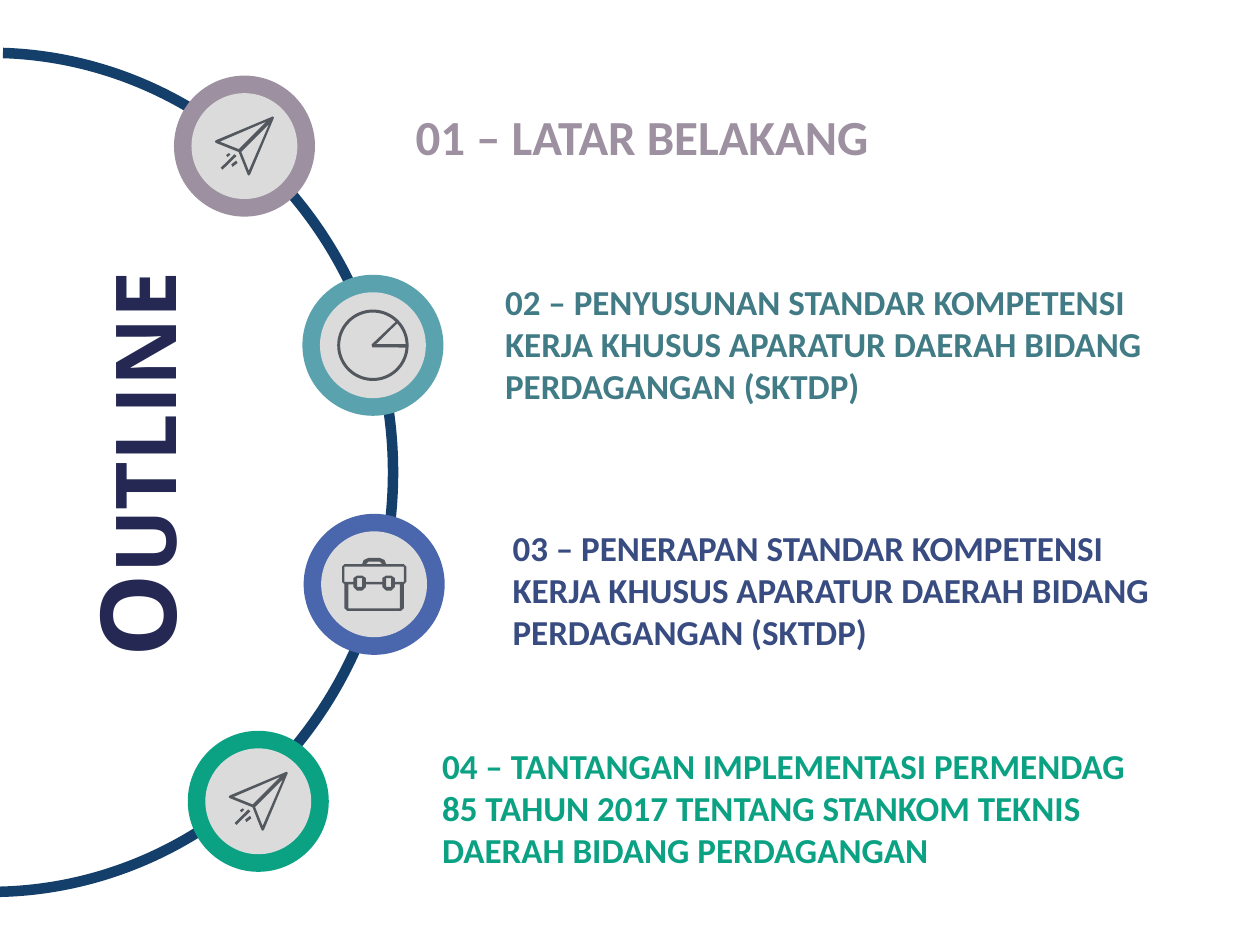
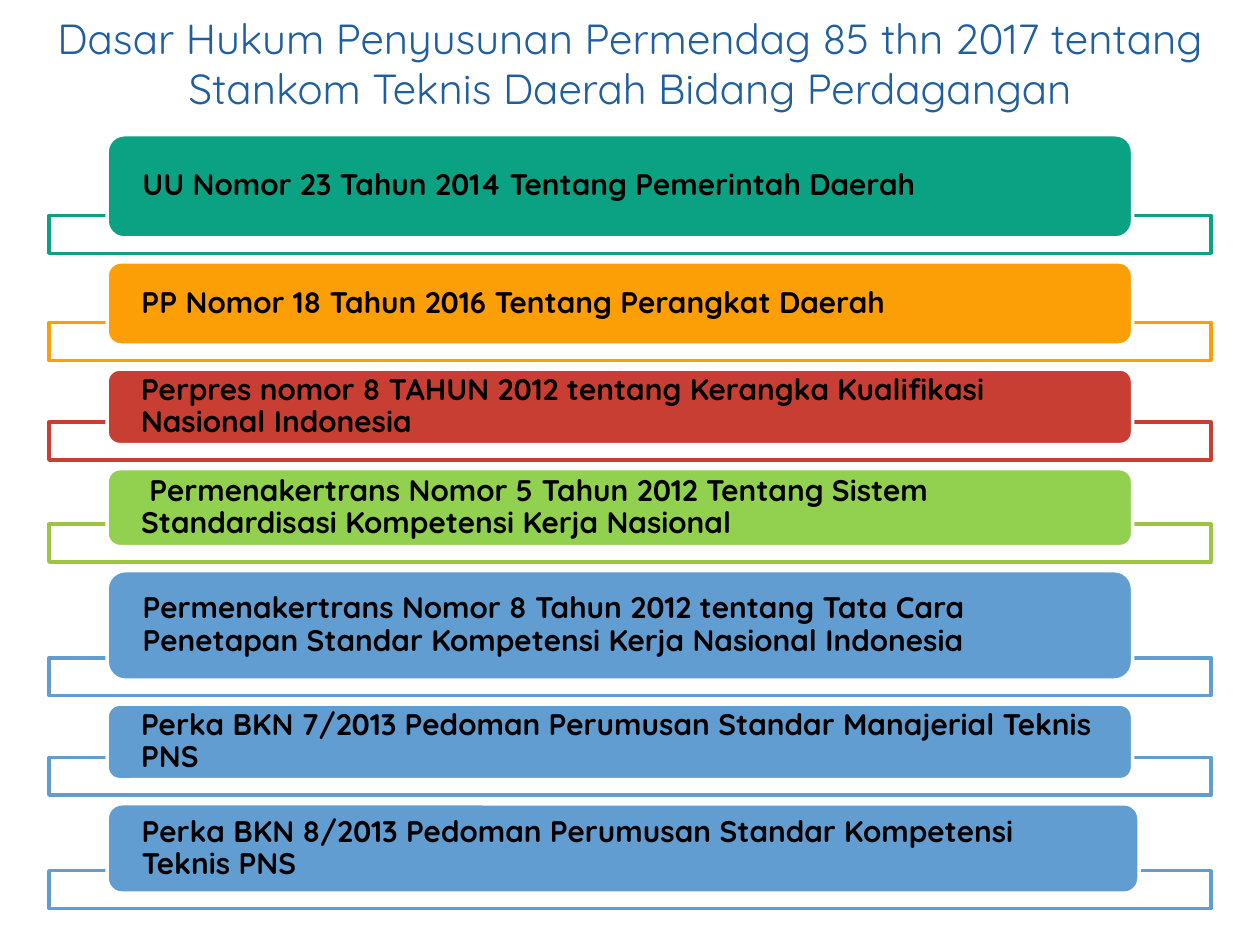
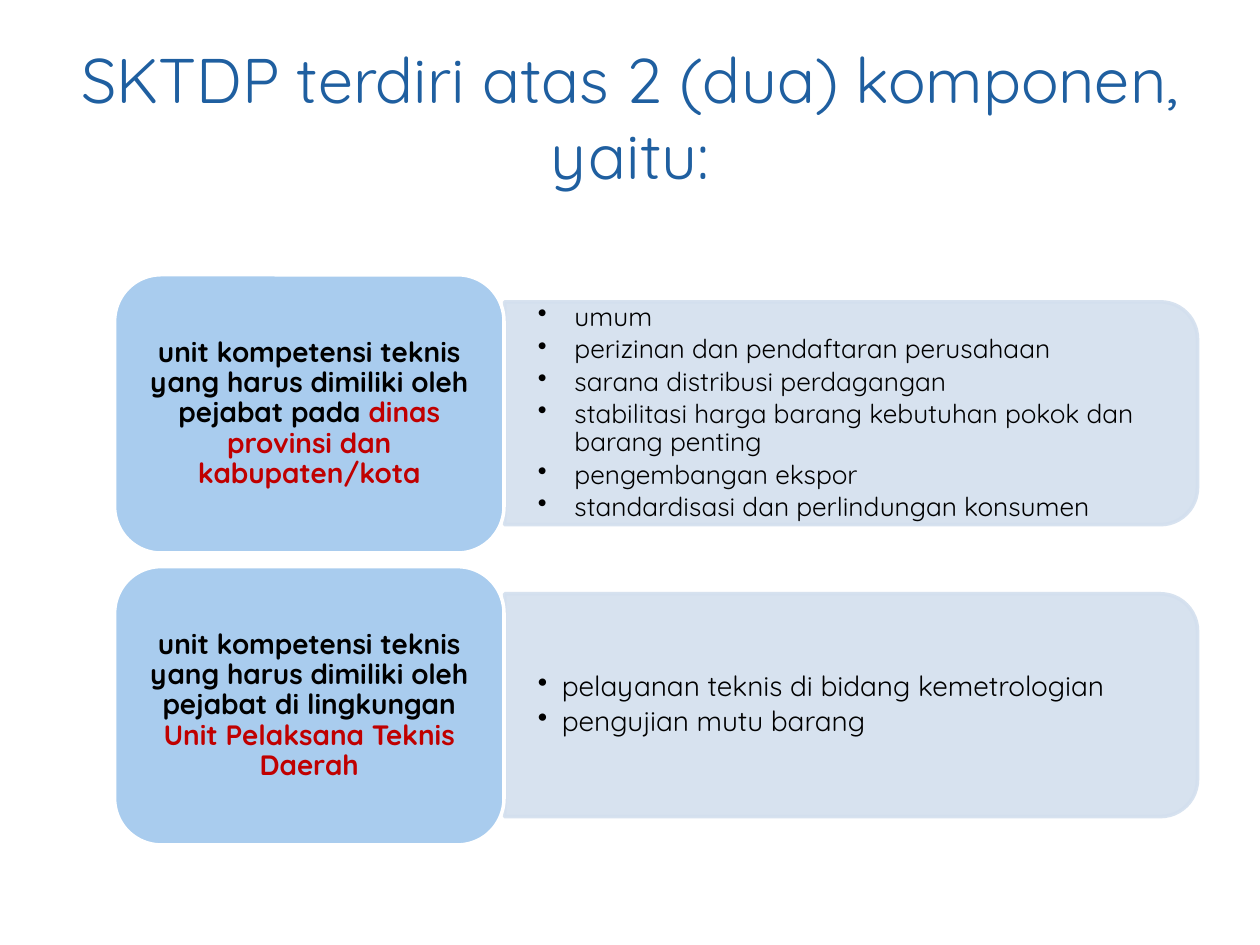
"""Build three slides on the SKTDP competence standard for regional trade offices."""

from dataclasses import dataclass
from math import cos, radians, sin

from lxml import etree
from pptx import Presentation
from pptx.dml.color import RGBColor
from pptx.enum.shapes import MSO_SHAPE
from pptx.enum.text import MSO_ANCHOR, MSO_AUTO_SIZE, PP_ALIGN
from pptx.oxml.ns import qn
from pptx.util import Pt

ARC, OVAL, RECT = MSO_SHAPE.ARC, MSO_SHAPE.OVAL, MSO_SHAPE.RECTANGLE
ROUNDED, ROUND_TOP = MSO_SHAPE.ROUNDED_RECTANGLE, MSO_SHAPE.ROUND_2_SAME_RECTANGLE
TOP, MIDDLE = MSO_ANCHOR.TOP, MSO_ANCHOR.MIDDLE
LEFT, CENTER = PP_ALIGN.LEFT, PP_ALIGN.CENTER
GROW, FIXED = MSO_AUTO_SIZE.SHAPE_TO_FIT_TEXT, MSO_AUTO_SIZE.NONE


@dataclass(frozen=True)
class Theme:
    """Colours, fonts and type sizes shared by the slides."""

    white: str = "FFFFFF"
    black: str = "000000"
    title: str = "1F5FA0"
    teal: str = "5AA2AE"
    dark_teal: str = "417B85"
    mauve: str = "9D90A0"
    indigo: str = "4A66AC"
    dark_indigo: str = "384C81"
    navy: str = "242852"
    arc: str = "143F6A"
    green: str = "0BA183"
    orange: str = "FC9E06"
    red: str = "C83E32"
    lime: str = "92D050"
    lime_frame: str = "9CC544"
    blue: str = "629DD1"
    pale_blue: str = "A9CCEE"
    panel: str = "D3DFEE"
    accent: str = "C00000"
    disc: str = "DBDBDB"
    icon: str = "53585F"
    sans: str = "Quicksand"
    label_font: str = "Calibri"
    outline_font: str = "Open Sans"
    outline_size: float = 60
    title_size: float = 36
    small_title_size: float = 24
    lead_size: float = 28
    label_size: float = 20
    card_size: float = 17
    unit_size: float = 16
    list_size: float = 15


THEME = Theme()
Point = tuple[float, float]
Contour = list[Point]


@dataclass(frozen=True)
class Place:
    """Left, top, width and height in points."""

    left: float
    top: float
    width: float
    height: float

    def lengths(self) -> list[Pt]:
        """Return the four lengths for python-pptx."""
        return [Pt(n) for n in (self.left, self.top, self.width, self.height)]


@dataclass(frozen=True)
class Icon:
    """Outline contours, with holes, within a box in points."""

    width: float
    height: float
    contours: list[Contour]


@dataclass(frozen=True)
class Chapter:
    """A ring on the arc and its label."""

    left: float
    top: float
    ring: str
    icon: Icon
    label: str
    label_place: Place
    color: str
    size: float = THEME.label_size
    wrap: bool = True


@dataclass(frozen=True)
class Law:
    """A legal basis card and the frame behind it."""

    text: str
    height: float
    fill: str
    frame: str
    width: float = 586


@dataclass(frozen=True)
class Unit:
    """A competence unit with its list of topics."""

    lead: str
    accent: str
    topics: list[str]
    size: float
    indent: float


def turn(radius: float, start: int, end: int, center: float) -> Contour:
    """Return points along a clockwise circular arc."""
    return [
        (center + radius * cos(radians(a)), center + radius * sin(radians(a)))
        for a in range(start, end + 1, 5)
    ]


def clasp(left: float) -> Contour:
    """Return the opening of one briefcase clasp."""
    return [(left, 11.5), (left + 2.9, 11.5), (left + 2.9, 16.6), (left, 16.6)]


PLANE = Icon(33.8, 33.8, [
    [(33.8, 0.7), (33.1, 0), (0.6, 13.6), (0, 14.4), (0.6, 15.1), (13.6, 20.3),
     (18.7, 33.1), (19.4, 33.8), (20.2, 33.1)],
    [(19.4, 31), (15.1, 20.2), (31, 4.3)],
    [(2.9, 14.4), (29.5, 2.9), (13.7, 18.7)],
    [(12.2, 25.2), (13, 26.6), (10.1, 28.8), (9.4, 27.4)],
    [(11.2, 21.6), (12.4, 22.6), (4.4, 30.4), (3.4, 29.3)],
    [(8.1, 20.9), (8.9, 21.8), (7.3, 23.2), (6.4, 22.1)],
])
PIE = Icon(40.8, 40.8, [
    turn(20.4, 0, 355, 20.4),
    turn(18.7, 4, 314, 20.4) + [(19.6, 20), (20.1, 21.6)],
    turn(18.7, 318, 358, 20.4) + [(22.3, 19.7)],
])
BRIEFCASE = Icon(36.7, 30.2, [
    [(1.4, 3.6), (11.5, 3.6), (12.4, 1.2), (15.1, 0), (21.6, 0), (24.3, 1.2),
     (25.2, 3.6), (35.3, 3.6), (36.7, 5), (36.7, 13.7), (35.3, 15.1), (35.3, 28.8),
     (33.8, 30.2), (2.9, 30.2), (1.4, 28.8), (1.4, 15.1), (0, 13.7), (0, 5)],
    [(15.1, 2.2), (21.6, 2.2), (23, 3.6), (13.7, 3.6)],
    [(35.3, 5), (35.3, 13.7), (30.2, 13.7), (30.2, 11.5), (28.1, 10.1), (25.2, 10.1),
     (23, 11.5), (23, 13.7), (13.7, 13.7), (13.7, 11.5), (11.5, 10.1), (8.6, 10.1),
     (6.5, 11.5), (6.5, 13.7), (1.4, 13.7), (1.4, 5)],
    clasp(8.6),
    clasp(25.2),
    [(33.1, 28.8), (3.6, 28.8), (3.6, 15.1), (6.5, 15.1), (6.5, 16.6), (8.6, 18.7),
     (11.5, 18.7), (13.7, 16.6), (13.7, 15.1), (23, 15.1), (23, 16.6), (25.2, 18.7),
     (28.1, 18.7), (30.2, 16.6), (30.2, 15.1), (33.1, 15.1)],
])

CHAPTERS = [
    Chapter(99.4, 43.2, THEME.mauve, PLANE, "01 – LATAR BELAKANG",
            Place(230.4, 57.6, 276.5, 41), THEME.mauve, THEME.lead_size, False),
    Chapter(172.8, 157, THEME.teal, PIE,
            "02 – PENYUSUNAN STANDAR KOMPETENSI KERJA KHUSUS APARATUR DAERAH "
            "BIDANG PERDAGANGAN (SKTDP)",
            Place(281.5, 157, 386, 80), THEME.dark_teal),
    Chapter(173.5, 293.6, THEME.indigo, BRIEFCASE,
            "03 – PENERAPAN STANDAR KOMPETENSI KERJA KHUSUS APARATUR DAERAH "
            "BIDANG PERDAGANGAN (SKTDP)",
            Place(285.8, 297.4, 398, 80), THEME.dark_indigo),
    Chapter(107.3, 417.6, THEME.green, PLANE,
            "04 – TANTANGAN IMPLEMENTASI PERMENDAG 85 TAHUN 2017 TENTANG STANKOM "
            "TEKNIS DAERAH BIDANG PERDAGANGAN",
            Place(245.5, 422, 422, 80), THEME.green),
]

LAWS = [
    Law("UU Nomor 23 Tahun 2014 Tentang Pemerintah Daerah",
        59, THEME.green, THEME.green),
    Law("PP Nomor 18 Tahun 2016 Tentang Perangkat Daerah",
        47.5, THEME.orange, THEME.orange),
    Law("Perpres nomor 8 TAHUN 2012 tentang Kerangka Kualifikasi Nasional Indonesia",
        43.2, THEME.red, THEME.red),
    Law(" Permenakertrans Nomor 5 Tahun 2012 Tentang Sistem Standardisasi "
        "Kompetensi Kerja Nasional", 44.6, THEME.lime, THEME.lime_frame),
    Law("Permenakertrans Nomor 8 Tahun 2012 tentang Tata Cara Penetapan Standar "
        "Kompetensi Kerja Nasional Indonesia", 62.6, THEME.blue, THEME.blue),
    Law("Perka BKN 7/2013 Pedoman Perumusan Standar Manajerial Teknis PNS",
        43.2, THEME.blue, THEME.blue),
    Law("Perka BKN 8/2013 Pedoman Perumusan Standar Kompetensi Teknis PNS",
        51.1, THEME.blue, THEME.blue, 589.7),
]

UNITS = [
    Unit("unit kompetensi teknis yang harus dimiliki oleh pejabat pada ",
         "dinas provinsi dan kabupaten/kota",
         ["umum", "perizinan dan pendaftaran perusahaan",
          "sarana distribusi perdagangan",
          "stabilitasi harga barang kebutuhan pokok dan barang penting",
          "pengembangan ekspor", "standardisasi dan perlindungan konsumen"],
         THEME.list_size, 20.9),
    Unit("unit kompetensi teknis yang harus dimiliki oleh pejabat di lingkungan ",
         "Unit Pelaksana Teknis Daerah",
         ["pelayanan teknis di bidang kemetrologian", "pengujian mutu barang"],
         THEME.unit_size, 13.7),
]


def fade(fill, alpha: int) -> None:
    """Give a solid fill an opacity in percent."""
    color = fill._xPr.find(qn("a:solidFill"))[0]
    etree.SubElement(color, qn("a:alpha"), val=str(alpha * 1000))


def style(shape, fill: str | None = None, line: str | None = None,
          weight: float = 2, alpha: int = 100) -> None:
    """Set the fill, line and opacity of a shape without shadow."""
    shape.shadow.inherit = False
    if fill:
        shape.fill.solid()
        shape.fill.fore_color.rgb = RGBColor.from_string(fill)
        if alpha < 100:
            fade(shape.fill, alpha)
    else:
        shape.fill.background()
    if line:
        shape.line.color.rgb = RGBColor.from_string(line)
        shape.line.width = Pt(weight)
    else:
        shape.line.fill.background()


def add_block(page, kind, place: Place, **look):
    """Add a styled preset shape."""
    shape = page.shapes.add_shape(kind, *place.lengths())
    style(shape, **look)
    return shape


def add_bullet(para, indent: float) -> None:
    """Give a paragraph a round bullet with a hanging indent."""
    props = para._p.get_or_add_pPr()
    props.set("marL", str(Pt(indent)))
    props.set("indent", str(-Pt(indent)))
    etree.SubElement(props, qn("a:buChar"), char="•")


def add_outline(span, color: str) -> None:
    """Give a text run a thin outline."""
    line = etree.Element(qn("a:ln"), w=str(Pt(0.75)))
    fill = etree.SubElement(line, qn("a:solidFill"))
    etree.SubElement(fill, qn("a:srgbClr"), val=color)
    span.font._element.insert(0, line)


def write(box, paras: list[list[str]], *, size: float, font: str = THEME.sans,
          colors: tuple[str, ...] = (THEME.black,), bold: bool = False,
          align=LEFT, anchor=MIDDLE, inset: Point = (7.2, 3.6), spacing: float = 1,
          after: float = 0, indent: float = 0, outline: str = "",
          small_caps: bool = False, wrap: bool = True, fit=FIXED) -> None:
    """Write paragraphs of spans, one colour per span, into a shape."""
    frame = box.text_frame
    frame.word_wrap, frame.auto_size, frame.vertical_anchor = wrap, fit, anchor
    frame.margin_left = frame.margin_right = Pt(inset[0])
    frame.margin_top = frame.margin_bottom = Pt(inset[1])
    for index, spans in enumerate(paras):
        para = frame.add_paragraph() if index else frame.paragraphs[0]
        para.alignment, para.line_spacing, para.space_after = align, spacing, Pt(after)
        if indent:
            add_bullet(para, indent)
        for text, color in zip(spans, colors):
            span = para.add_run()
            span.text = text
            span.font.name, span.font.size, span.font.bold = font, Pt(size), bold
            span.font.color.rgb = RGBColor.from_string(color)
            if outline:
                add_outline(span, outline)
            if small_caps:
                span.font._element.set("cap", "small")


def add_text(page, place: Place, paras: list[list[str]], **text_format):
    """Add a text box with formatted paragraphs."""
    box = page.shapes.add_textbox(*place.lengths())
    write(box, paras, **text_format)
    return box


def add_title(page, place: Place, text: str, size: float) -> None:
    """Add the centred slide title."""
    add_text(page, place, [[text]], size=size, colors=(THEME.title,),
             align=CENTER, outline=THEME.teal)


def add_icon(page, icon: Icon, left: float, top: float) -> None:
    """Draw an icon as one filled freeform."""
    fine = [[(x * 100, y * 100) for x, y in contour] for contour in icon.contours]
    builder = page.shapes.build_freeform(*fine[0][0], scale=Pt(0.01))
    builder.add_line_segments(fine[0][1:])
    for contour in fine[1:]:
        builder.move_to(*contour[0])
        builder.add_line_segments(contour[1:])
    style(builder.convert_to_shape(Pt(left), Pt(top)), fill=THEME.icon)


def add_chapter(page, chapter: Chapter) -> None:
    """Draw a ring with its icon and label."""
    ring, disc = 80.6, 60.5
    for diameter, color in ((ring, chapter.ring), (disc, THEME.disc)):
        gap = (ring - diameter) / 2
        add_block(page, OVAL, Place(chapter.left + gap, chapter.top + gap,
                                    diameter, diameter), fill=color)
    add_icon(page, chapter.icon, chapter.left + (ring - chapter.icon.width) / 2,
             chapter.top + (ring - chapter.icon.height) / 2)
    add_text(page, chapter.label_place, [[chapter.label]], size=chapter.size,
             font=THEME.label_font, colors=(chapter.color,), bold=True,
             anchor=TOP, wrap=chapter.wrap, fit=GROW)


def build_outline(page) -> None:
    """Build the outline slide."""
    arc = add_block(page, ARC, Place(-235.4, 30.2, 460, 479.5),
                    line=THEME.arc, weight=6)
    arc.adjustments[0], arc.adjustments[1] = 163.02, 53.62
    heading = add_text(page, Place(-103.7, 226, 360.7, 78.5), [["Outline"]],
                       size=THEME.outline_size, font=THEME.outline_font,
                       colors=(THEME.navy,), bold=True, align=CENTER, small_caps=True)
    heading.rotation = 270
    for chapter in CHAPTERS:
        add_chapter(page, chapter)


def build_laws(page) -> None:
    """Build the slide of legal bases."""
    add_title(page, Place(0, 0, 720, 71.3),
              "Dasar Hukum Penyusunan Permendag 85 thn 2017 tentang Stankom Teknis "
              "Daerah Bidang Perdagangan", THEME.small_title_size)
    top, overlap, step = 77, 12.8, 13.7
    for law in LAWS:
        bottom = top + law.height
        add_block(page, RECT, Place(28, bottom - overlap, 664, 21.6),
                  fill=THEME.white, line=law.frame, alpha=90)
        card = add_block(page, ROUNDED, Place(61.2, top, law.width, law.height),
                         fill=law.fill, line=THEME.white)
        write(card, [[law.text]], size=THEME.card_size, bold=True,
              inset=(17.3, 0), spacing=0.9)
        top = bottom + step


def build_units(page) -> None:
    """Build the slide of the two components."""
    add_title(page, Place(36, 21.6, 648, 90),
              "SKTDP terdiri atas 2 (dua) komponen, yaitu:", THEME.title_size)
    for index, unit in enumerate(UNITS):
        top = 157 + index * 166.8
        panel = add_block(page, ROUND_TOP, Place(422.6, top - 118.8, 127.4, 396),
                          fill=THEME.panel, line=THEME.panel, alpha=90)
        panel.rotation = 90
        fade(panel.line.fill, 90)
        add_text(page, Place(288, top + 21.8, 389.5, 114.5),
                 [[topic] for topic in unit.topics], size=unit.size,
                 inset=(19.4, 10), spacing=0.9, after=unit.size * 0.15,
                 indent=unit.indent)
        card = add_block(page, ROUNDED, Place(65.5, top, 222.5, 159),
                         fill=THEME.pale_blue, line=THEME.white)
        write(card, [[unit.lead, unit.accent]], size=THEME.unit_size, bold=True,
              colors=(THEME.black, THEME.accent), align=CENTER,
              inset=(5, 2.2), spacing=0.9)


def main() -> None:
    """Build and save the deck."""
    deck = Presentation()
    deck.slide_width, deck.slide_height = Pt(720), Pt(540)
    for build in (build_outline, build_laws, build_units):
        build(deck.slides.add_slide(deck.slide_layouts[6]))
    deck.save("out.pptx")


if __name__ == "__main__":
    main()
